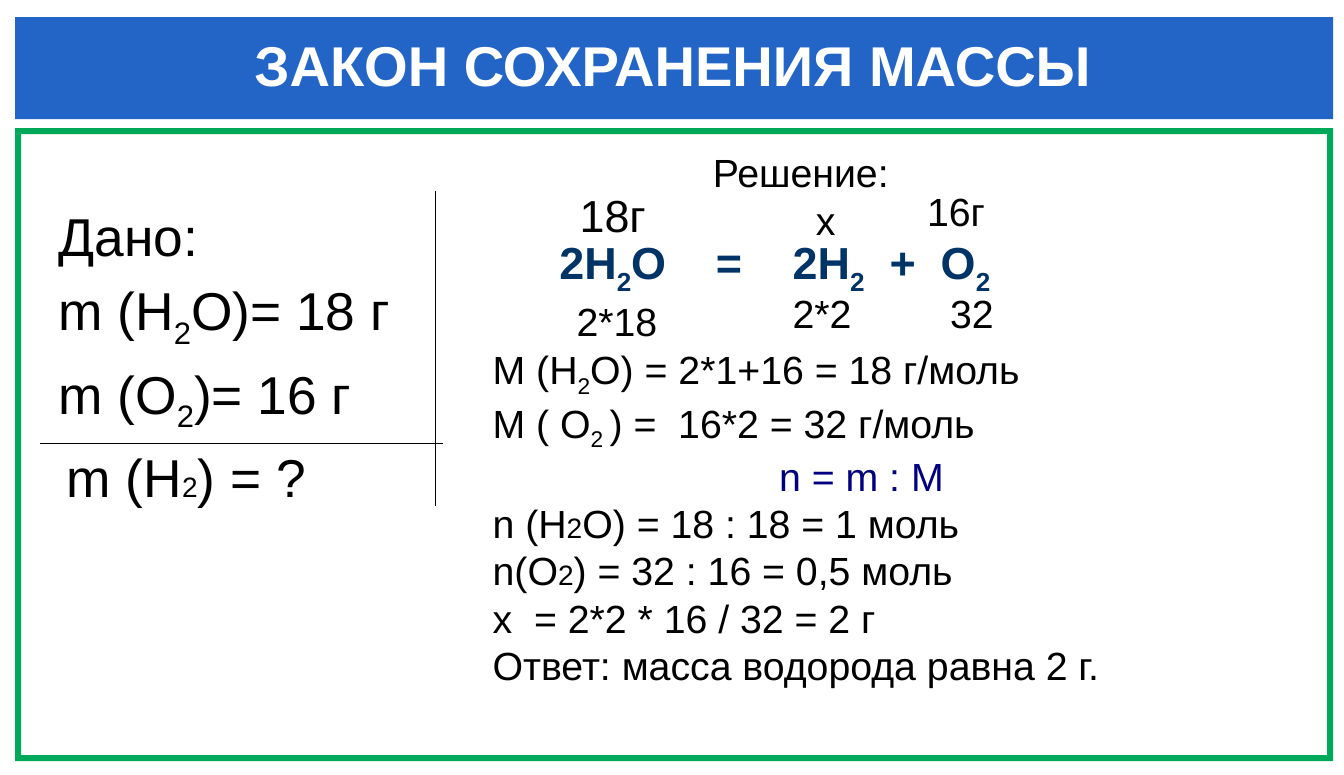
import pptx
import pptx.dml.color
import pptx.enum.shapes
import pptx.enum.text
import pptx.util
from lxml import etree
from pptx.oxml.ns import qn

Inches = pptx.util.Inches
Pt = pptx.util.Pt
CENTIMETRES_PER_INCH = 2.54
COLORS = {
    "banner": "2365C7",
    "frame": "00A859",
    "title": "FFFFFF",
    "text": "000000",
    "equation": "003366",
    "formula": "000080",
}
FONT = "Arial"
SUBSCRIPT = "subscript"
SMALL = "small"


def color(name):
    return pptx.dml.color.RGBColor.from_string(COLORS[name])


def add_run(paragraph, text, size, color_name, bold=False, style=None):
    run = paragraph.add_run()
    run.text = text
    run.font.name = FONT
    run.font.size = Pt(20 if style == SMALL else size)
    run.font.bold = bold
    run.font.color.rgb = color(color_name)
    if style == SUBSCRIPT:
        run._r.get_or_add_rPr().set("baseline", "-25000")


def add_text(slide, box, lines, size, color_name="text", bold=False,
             centered=(), space_before=0, wrap=True):
    shape = slide.shapes.add_textbox(*map(Inches, box))
    frame = shape.text_frame
    frame.word_wrap = wrap
    frame.auto_size = pptx.enum.text.MSO_AUTO_SIZE.SHAPE_TO_FIT_TEXT
    for index, line in enumerate(lines):
        paragraph = frame.paragraphs[0] if index == 0 else frame.add_paragraph()
        paragraph.space_before = Pt(space_before)
        if index in centered:
            paragraph.alignment = pptx.enum.text.PP_ALIGN.CENTER
        for part in line:
            text, style = part if isinstance(part, tuple) else (part, None)
            line_color = "formula" if text.startswith("n = m") else color_name
            add_run(paragraph, text, size, line_color, bold, style)
    return shape


def add_filled_shape(slide, kind, box, color_name):
    shape = slide.shapes.add_shape(kind, *map(Inches, box))
    shape.shadow.inherit = False
    shape.fill.solid()
    shape.fill.fore_color.rgb = color(color_name)
    shape.line.fill.background()
    return shape


def add_rule(slide, start, end):
    connector = slide.shapes.add_connector(
        pptx.enum.shapes.MSO_CONNECTOR.STRAIGHT,
        *map(Inches, start + end))
    connector.line.color.rgb = color("text")
    connector.line.width = Pt(0.75)
    etree.SubElement(connector._element.spPr, qn("a:effectLst"))


def add_tab_stops(paragraph, positions):
    tab_list = etree.SubElement(paragraph._p.get_or_add_pPr(), qn("a:tabLst"))
    for position in positions:
        tab = etree.SubElement(tab_list, qn("a:tab"))
        tab.set("pos", str(Inches(position)))
        tab.set("algn", "l")


def add_banner(slide, box):
    left, top, width, height = box
    add_filled_shape(slide, pptx.enum.shapes.MSO_SHAPE.RECTANGLE, box, "banner")
    add_text(slide, (left + 0.1, top + 0.08, width - 0.23, 0.77),
             [["ЗАКОН СОХРАНЕНИЯ МАССЫ"]], 40, "title", True, centered=(0,))


def add_frame(slide, box):
    left, top, width, height = box
    thickness = 0.06
    frame = add_filled_shape(slide, pptx.enum.shapes.MSO_SHAPE.FRAME, box, "frame")
    frame.adjustments[0] = thickness / min(width, height)


def add_given(slide, box):
    left, top, width, height = box
    size = 38
    known = [
        ["Дано:"],
        ["m (H", ("2", SUBSCRIPT), "O)= 18 г"],
        ["m (O", ("2", SUBSCRIPT), ")= 16 г"],
    ]
    add_text(slide, (left + 0.08, top + 0.07, 4.06, 2.28), known, size,
             space_before=size * 0.2)
    add_text(slide, (left + 0.16, top + 2.46, 2.59, 0.74),
             [["m (H", ("2", SMALL), ") = ?"]], size, wrap=False)
    add_rule(slide, (left + 3.91, top), (left + 3.91, top + height))
    add_rule(slide, (left, top + 2.5), (left + width, top + 2.5))


def add_equation(slide, box):
    left, top, width, height = box
    equation = ["2H", ("2", SUBSCRIPT), "O\t=\t2H", ("2", SUBSCRIPT),
                "\t+  O", ("2", SUBSCRIPT)]
    shape = add_text(slide, (left, top + 0.47, width, 0.64), [equation], 32,
                     "equation", True, space_before=6.4)
    add_tab_stops(shape.text_frame.paragraphs[0], (1.55, 2.31, 3.27))
    labels = [
        ("18г", 0.2, 0, 0.86, 32),
        ("x", 2.54, 0.08, 0.4, 28),
        ("16г", 3.64, 0, 0.78, 28),
        ("2*18", 0.17, 1.09, 1.12, 28),
        ("2*2", 2.31, 1.01, 0.8, 28),
        ("32", 3.87, 1.01, 0.64, 28),
    ]
    for text, across, down, label_width, size in labels:
        add_text(slide, (left + across, top + down, label_width, 0.57),
                 [[text]], size, wrap=False)


def add_solution(slide, box):
    left, top, width, height = box
    add_text(slide, (left + 2.18, top, 1.96, 0.57), [["Решение:"]], 28,
             wrap=False)
    add_equation(slide, (left + 0.66, top + 0.39, 4.8, 1.66))
    steps = [
        ["M (H", ("2", SUBSCRIPT), "O) = 2*1+16 = 18 г/моль"],
        ["M ( O", ("2 ", SUBSCRIPT), ") =  16*2 = 32 г/моль"],
        ["n = m : М"],
        ["n (H", ("2", SMALL), "O) = 18 : 18 = 1 моль"],
        ["n(O", ("2", SMALL), ") = 32 : 16 = 0,5 моль"],
        ["x  = 2*2 * 16 / 32 = 2 г"],
        ["Ответ: масса водорода равна 2 г."],
    ]
    add_text(slide, (left, top + 1.95, width, height - 1.95), steps, 28,
             centered=(2,))


def main():
    presentation = pptx.Presentation()
    presentation.slide_width = Inches(33.8 / CENTIMETRES_PER_INCH)
    presentation.slide_height = Inches(19.5 / CENTIMETRES_PER_INCH)
    slide = presentation.slides.add_slide(presentation.slide_layouts[6])
    add_frame(slide, (0.15, 1.27, 13.05, 6.27))
    add_banner(slide, (0.15, 0.17, 13.05, 1.01))
    add_given(slide, (0.4, 1.89, 3.99, 3.12))
    add_solution(slide, (4.78, 1.42, 7.5, 5.35))
    presentation.save("out.pptx")


if __name__ == "__main__":
    main()
